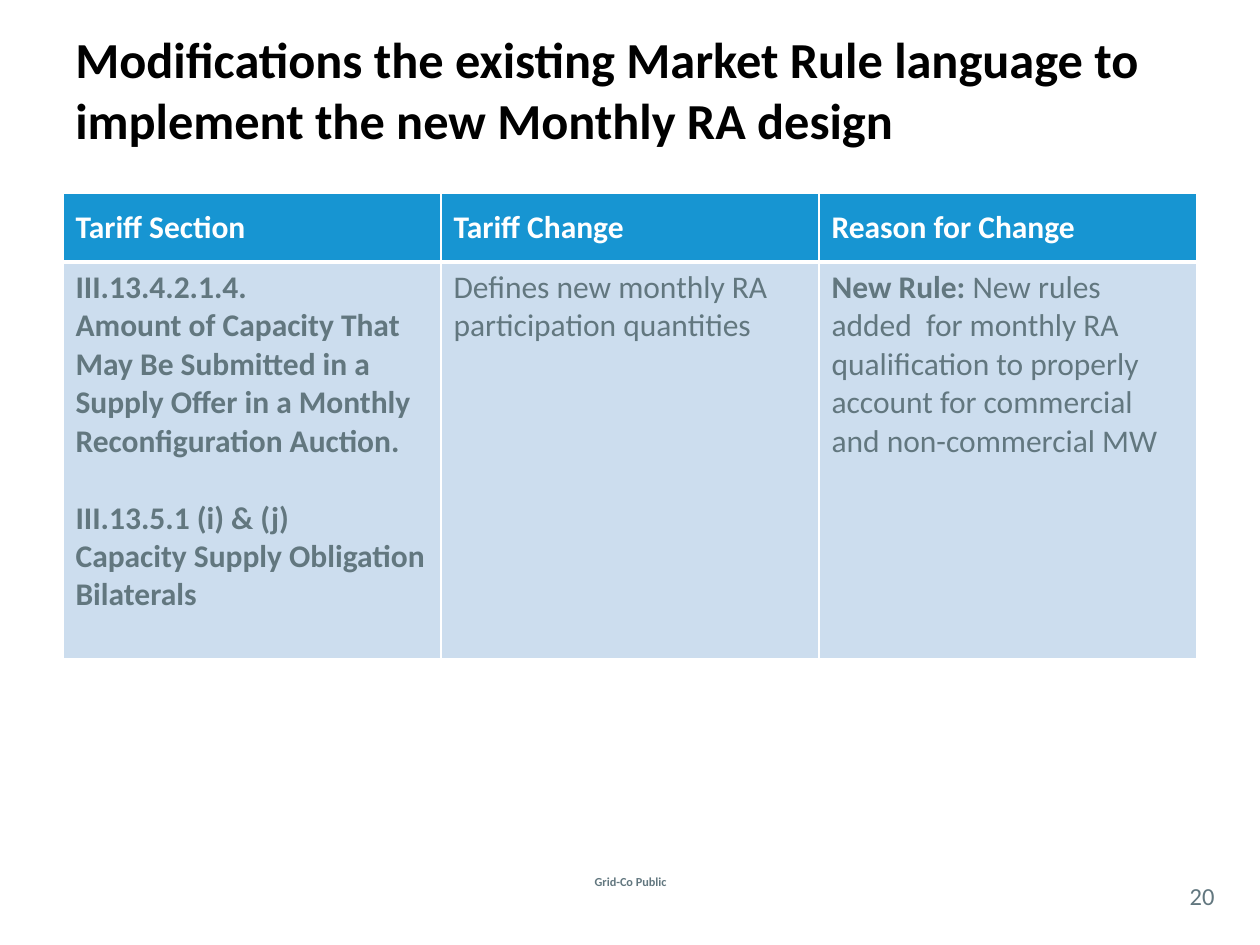
from lxml.etree import SubElement
from pptx import Presentation
from pptx.dml.color import RGBColor
from pptx.enum.text import MSO_ANCHOR, PP_ALIGN
from pptx.oxml.ns import qn
from pptx.util import Inches, Pt

# Content: a cell is a list of paragraphs, a paragraph a list of (text, bold)
TITLE = "Modifications the existing Market Rule language to implement the new Monthly RA design"
FOOTER = "Grid-Co Public"
PAGE_NUMBER = "20"
HEADINGS = ["Tariff Section", "Tariff Change", "Reason for Change"]
SECTIONS = [
    [("III.13.4.2.1.4.", True)],
    [("Amount of Capacity That May Be Submitted in a Supply Offer "
      "in a Monthly Reconfiguration Auction.", True)],
    [("III.13.5.1 (i) & (j)", True)],
    [("Capacity Supply Obligation Bilaterals", True)],
]
CHANGE = [[("Defines new monthly RA participation quantities", False)]]
REASON = [[("New Rule: ", True),
           ("New rules added  for monthly RA qualification to properly account "
            "for commercial and non-commercial MW", False)]]
ROWS = [[[[(heading, True)]] for heading in HEADINGS], [SECTIONS, CHANGE, REASON]]
SECOND_SECTION = 2  # paragraph that opens the second tariff section

COLORS = {"title": "000000", "text": "62777F", "white": "FFFFFF",
          "header": "1795D2", "body": "CCDDEE"}
ROW_STYLES = [
    {"height": 0.55, "fill": "header", "text": "white", "anchor": MSO_ANCHOR.MIDDLE,
     "borders": {"lnL": 1, "lnR": 1, "lnT": 1, "lnB": 3}},
    {"height": 3.15, "fill": "body", "text": "text", "anchor": MSO_ANCHOR.TOP,
     "borders": {"lnL": 1, "lnR": 1, "lnT": 3, "lnB": 1}},
]
COLUMN_WIDTH = 3
LEFT, TABLE_TOP = 0.5, 1.53


def add_span(para, text, size, color, bold):
    span = para.add_run()
    span.text = text
    for name, value in {"name": "Calibri", "size": Pt(size), "bold": bold}.items():
        setattr(span.font, name, value)
    span.font.color.rgb = RGBColor.from_string(COLORS[color])


def add_text(page, place, text, size, color, bold, align, margins=None):
    frame = page.shapes.add_textbox(*map(Inches, place)).text_frame
    settings = {"word_wrap": True, "vertical_anchor": MSO_ANCHOR.MIDDLE, **(margins or {})}
    for name, value in settings.items():
        setattr(frame, name, value)
    para = frame.paragraphs[0]
    para.alignment = align
    add_span(para, text, size, color, bold)


def add_borders(cell, widths):
    properties = cell._tc.get_or_add_tcPr()
    for side, width in widths.items():
        line = SubElement(properties, qn(f"a:{side}"), w=str(Pt(width)))
        fill = SubElement(line, qn("a:solidFill"))
        SubElement(fill, qn("a:srgbClr"), val=COLORS["white"])


def fill_cell(cell, paragraphs, style):
    add_borders(cell, style["borders"])
    cell.fill.solid()
    cell.fill.fore_color.rgb = RGBColor.from_string(COLORS[style["fill"]])
    cell.vertical_anchor = style["anchor"]
    frame = cell.text_frame
    for index, spans in enumerate(paragraphs):
        para = frame.add_paragraph() if index else frame.paragraphs[0]
        if index == SECOND_SECTION:
            para.space_before = Pt(22)
        for text, bold in spans:
            add_span(para, text, 18, style["text"], bold)


def main():
    deck = Presentation()
    deck.slide_width, deck.slide_height = Inches(10), Inches(7.5)
    page = deck.slides.add_slide(deck.slide_layouts[6])

    # Footer, page number and title
    no_margins = {f"margin_{side}": 0 for side in ("left", "top", "right", "bottom")}
    add_text(page, (4.27, 6.75, 1.47, 0.5), FOOTER, 7, "text", True, PP_ALIGN.CENTER)
    add_text(page, (9.33, 6.96, 0.42, 0.29), PAGE_NUMBER, 14, "text", False,
             PP_ALIGN.CENTER, no_margins)
    add_text(page, (LEFT, 0.08, 9, 1.25), TITLE, 28.8, "title", True, PP_ALIGN.LEFT)

    # Table of tariff changes
    width = COLUMN_WIDTH * len(HEADINGS)
    height = sum(style["height"] for style in ROW_STYLES)
    place = map(Inches, (LEFT, TABLE_TOP, width, height))
    table = page.shapes.add_table(len(ROWS), len(HEADINGS), *place).table
    for column in table.columns:
        column.width = Inches(COLUMN_WIDTH)
    for row, contents, style in zip(table.rows, ROWS, ROW_STYLES):
        row.height = Inches(style["height"])
        for cell, paragraphs in zip(row.cells, contents):
            fill_cell(cell, paragraphs, style)

    deck.save("out.pptx")


if __name__ == "__main__":
    main()
